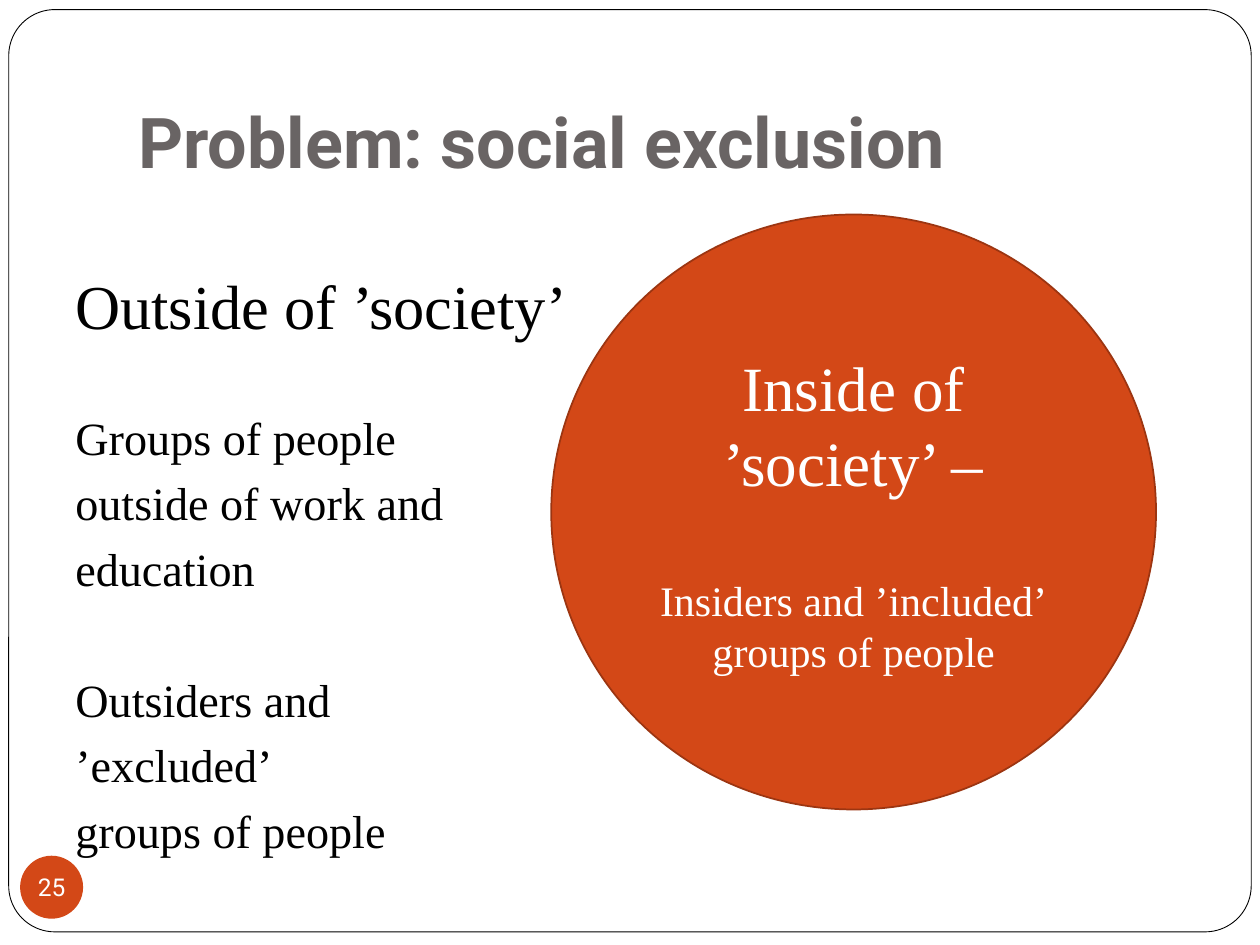
from pptx import Presentation
from pptx.dml.color import RGBColor
from pptx.enum.shapes import MSO_SHAPE
from pptx.enum.text import MSO_ANCHOR, PP_ALIGN
from pptx.util import Pt

WHITE = RGBColor(0xFF, 0xFF, 0xFF)
BLACK = RGBColor(0, 0, 0)
GREY = RGBColor(0x69, 0x64, 0x64)
ORANGE = RGBColor(0xD3, 0x48, 0x17)
RUST = RGBColor(0x9C, 0x35, 0x11)
SANS, SERIF = "Roboto", "Times New Roman"


def add_panel(slide, kind, box, fill, line=None, weight=1):
    panel = slide.shapes.add_shape(kind, *map(Pt, box))
    panel.shadow.inherit = False
    panel.fill.solid()
    panel.fill.fore_color.rgb = fill
    if line is None:
        panel.line.fill.background()
    else:
        panel.line.color.rgb = line
        panel.line.width = Pt(weight)
    return panel


def write(frame, lines, font, color, align=PP_ALIGN.LEFT, bold=False):
    """Fill a text frame from (text, size, space before) lines."""
    for i, (text, size, before) in enumerate(lines):
        paragraph = frame.add_paragraph() if i else frame.paragraphs[0]
        paragraph.text = text
        paragraph.alignment = align
        paragraph.space_before = Pt(before)
        paragraph.font.name = font
        paragraph.font.size = Pt(size)
        paragraph.font.bold = bold
        paragraph.font.color.rgb = color


def add_frame(slide, box):
    border = add_panel(slide, MSO_SHAPE.ROUNDED_RECTANGLE, box, WHITE, BLACK, 0.5)
    border.adjustments[0] = 0.05


def add_title(slide, box, text):
    frame = slide.shapes.add_textbox(*map(Pt, box)).text_frame
    frame.word_wrap = True
    frame.vertical_anchor = MSO_ANCHOR.BOTTOM
    frame.margin_bottom = Pt(7.2)
    write(frame, [(text, 40, 0)], SANS, GREY, bold=True)


def add_outside(slide, box):
    frame = slide.shapes.add_textbox(*map(Pt, box)).text_frame
    frame.word_wrap = True
    write(frame, [
        ("Outside of ’society’", 35.7, 0),
        ("Groups of people", 26.4, 38.4),
        ("outside of work and", 26.4, 5.8),
        ("education", 26.4, 5.8),
        ("Outsiders and", 26.4, 43),
        ("’excluded’", 26.4, 5.8),
        ("groups of people", 26.4, 5.8),
    ], SERIF, BLACK)


def add_inside(slide, box):
    frame = add_panel(slide, MSO_SHAPE.OVAL, box, ORANGE, RUST).text_frame
    frame.word_wrap = True
    frame.vertical_anchor = MSO_ANCHOR.MIDDLE
    write(frame, [
        ("Inside of ’society’ –", 36, 0),
        ("Insiders and ’included’", 24, 43),
        ("groups of people", 24, 0),
    ], SERIF, WHITE, PP_ALIGN.CENTER)


def add_page_number(slide, box, number):
    frame = add_panel(slide, MSO_SHAPE.OVAL, box, ORANGE).text_frame
    frame.word_wrap = False
    frame.vertical_anchor = MSO_ANCHOR.MIDDLE
    frame.margin_left = frame.margin_right = Pt(0)
    frame.margin_top = frame.margin_bottom = Pt(0)
    write(frame, [(number, 14, 0)], SANS, WHITE, PP_ALIGN.CENTER)


def main():
    deck = Presentation()
    deck.slide_width, deck.slide_height = Pt(720), Pt(540)
    slide = deck.slides.add_slide(deck.slide_layouts[6])

    # Border and heading
    add_frame(slide, (5, 5.5, 710, 527))
    add_title(slide, (72, 21.6, 612, 90), "Problem: social exclusion")

    # The two sides of society
    add_outside(slide, (36, 149, 648, 350))
    add_inside(slide, (315, 122.6, 345.6, 340))

    # Page number
    add_page_number(slide, (11.5, 489, 36, 36), "25")

    deck.save("out.pptx")


if __name__ == "__main__":
    main()
